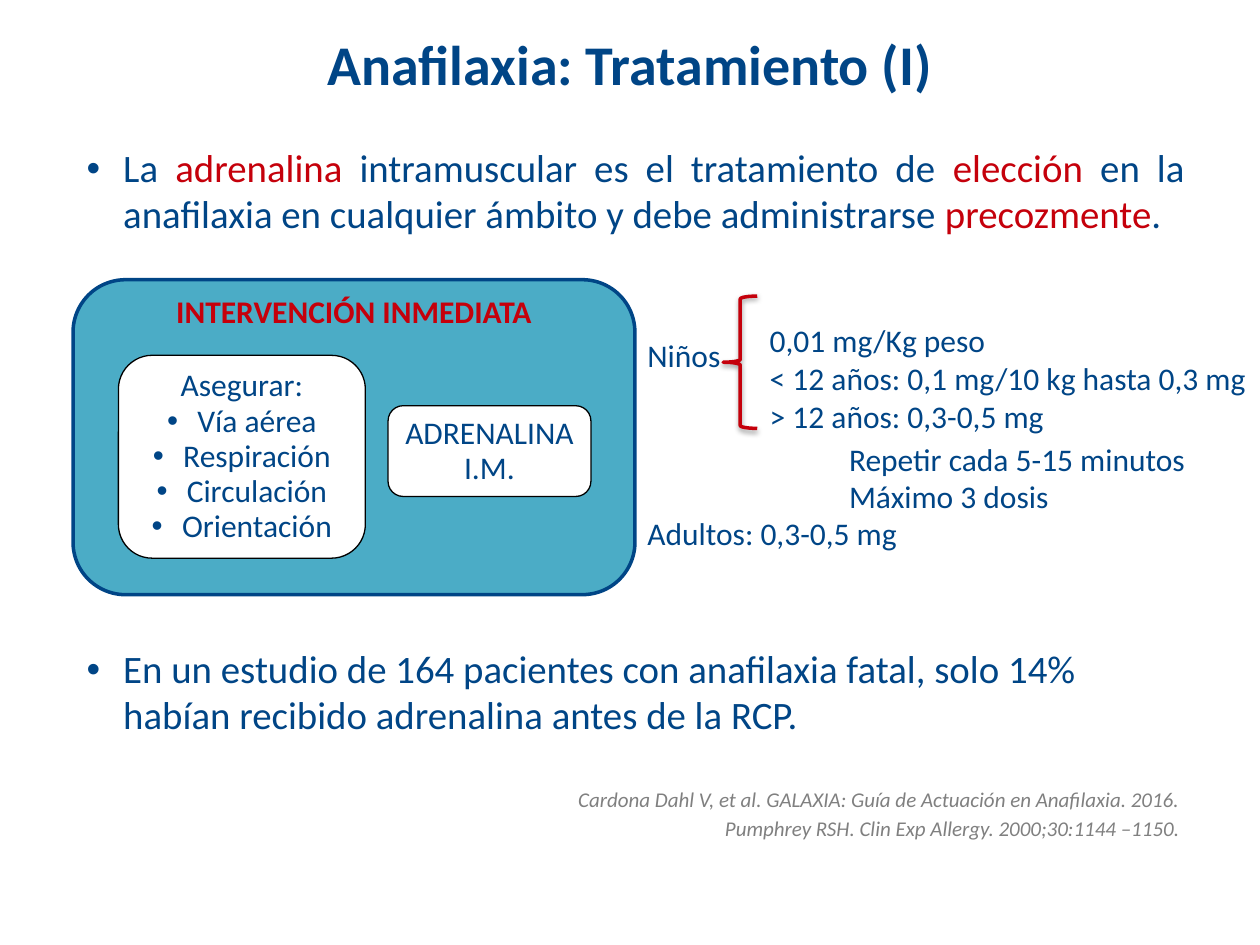
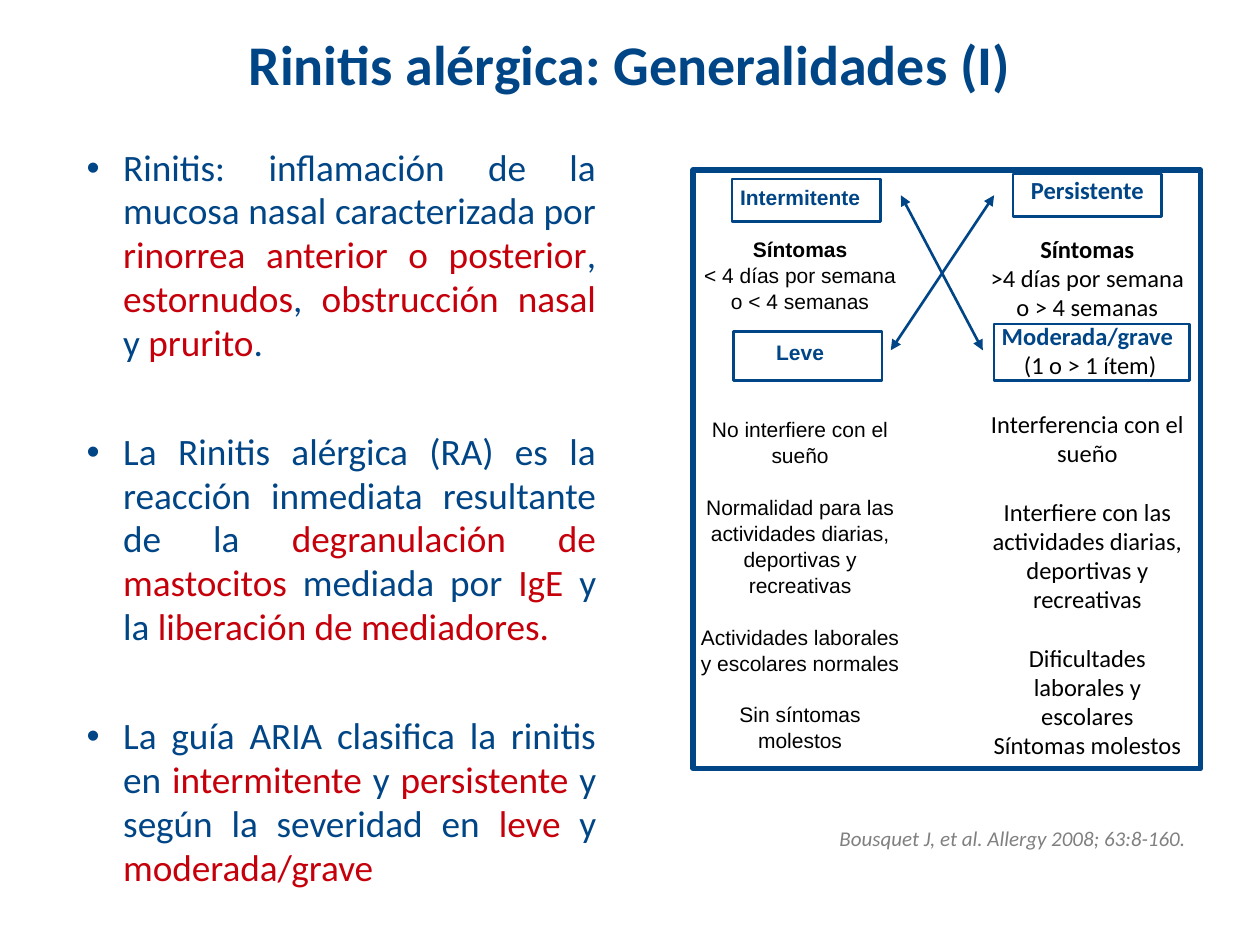
from dataclasses import dataclass
from typing import NamedTuple

from lxml import etree
from pptx import Presentation
from pptx import util as u
from pptx.dml.color import RGBColor
from pptx.enum import shapes, text
from pptx.oxml import ns

COLORS = {"navy": "004586", "red": "C5000B", "teal": "4BACC6",
          "gray": "808080", "black": "000000", "white": "FFFFFF"}
LEFT, CENTER, RIGHT, JUSTIFY = (text.PP_ALIGN.LEFT, text.PP_ALIGN.CENTER,
                                text.PP_ALIGN.RIGHT, text.PP_ALIGN.JUSTIFY)
TOP, MIDDLE = text.MSO_ANCHOR.TOP, text.MSO_ANCHOR.MIDDLE
ROUNDED, PLAIN = shapes.MSO_SHAPE.ROUNDED_RECTANGLE, shapes.MSO_SHAPE.RECTANGLE


class Area(NamedTuple):
    left: float
    top: float
    width: float
    height: float


class Span(NamedTuple):
    words: str
    color: str = "navy"
    bold: bool = False


@dataclass
class Para:
    spans: list[Span]
    before: float = 0
    bullet: bool = False
    align: text.PP_ALIGN | None = None


@dataclass
class Style:
    size: float
    align: text.PP_ALIGN = LEFT
    font: str = "Calibri"
    italic: bool = False
    spacing: float = 1.0
    margin: float = 0.0
    hang: float = 0.29


TITLE = Style(32, CENTER)
REFERENCE = Style(12, RIGHT, italic=True)
DOSE = Style(18)
CARD = Style(18, CENTER, spacing=0.93, margin=0.24, hang=0.24)


# Shared text helpers
def rgb(name: str) -> RGBColor:
    return RGBColor.from_string(COLORS[name])


def accented(marked: str) -> list[Span]:
    """Split at bars: every second piece is red."""
    return [Span(piece, "red" if index % 2 else "navy")
            for index, piece in enumerate(marked.split("|")) if piece]


def plain(*lines: str, color: str = "navy") -> list[Para]:
    return [Para([Span(line, color)]) for line in lines]


def add_element(parent, tag: str, **attributes):
    return etree.SubElement(parent, ns.qn(tag), attributes)


def fill_text(frame, paras: list[Para], style: Style, anchor=TOP, wrap: bool = True) -> None:
    frame.word_wrap = wrap
    frame.vertical_anchor = anchor
    for index, item in enumerate(paras):
        para = frame.paragraphs[0] if index == 0 else frame.add_paragraph()
        if item.bullet:
            properties = para._p.get_or_add_pPr()
            properties.set("marL", str(u.Inches(style.margin)))
            properties.set("indent", str(-u.Inches(style.hang)))
            add_element(properties, "a:buFont", typeface="Arial")
            add_element(properties, "a:buChar", char="•")
        para.alignment = item.align or style.align
        para.line_spacing = style.spacing
        if index:
            para.space_before = u.Pt(item.before)
        for words, color, bold in item.spans:
            span = para.add_run()
            span.text = words
            font = span.font
            font.name, font.size = style.font, u.Pt(style.size)
            font.bold, font.italic = bold, style.italic
            font.color.rgb = rgb(color)


def add_text(page, area: Area, paras: list[Para], style: Style, anchor=TOP, wrap: bool = True) -> None:
    box = page.shapes.add_textbox(*map(u.Inches, area))
    fill_text(box.text_frame, paras, style, anchor, wrap)


# Shared shape helpers
def add_box(page, area: Area, kind, line: str, weight: float, fill: str = ""):
    box = page.shapes.add_shape(kind, *map(u.Inches, area))
    box.shadow.inherit = False
    if fill:
        box.fill.solid()
        box.fill.fore_color.rgb = rgb(fill)
    else:
        box.fill.background()
    box.line.color.rgb = rgb(line)
    box.line.width = u.Pt(weight)
    return box


def add_double_arrow(page, start: tuple[float, float], end: tuple[float, float]) -> None:
    arrow = page.shapes.add_connector(shapes.MSO_CONNECTOR.STRAIGHT, *map(u.Inches, start + end))
    arrow.line.color.rgb = rgb("navy")
    arrow.line.width = u.Pt(1.5)
    line = arrow.line._get_or_add_ln()
    for tag in ("a:headEnd", "a:tailEnd"):
        add_element(line, tag, type="triangle")
    add_element(arrow._element.spPr, "a:effectLst")


def add_page(deck, title: str, references: list[str], reference_area: Area):
    page = deck.slides.add_slide(deck.slide_layouts[6])
    add_text(page, Area(0.5, 0.17, 9, 0.66), [Para([Span(title, bold=True)])], TITLE, MIDDLE)
    paras = plain(*references, color="gray")
    for para in paras:
        para.before = 2.4
    add_text(page, reference_area, paras, REFERENCE)
    return page


# Slide 1: anaphylaxis treatment
def build_anaphylaxis(deck) -> None:
    page = add_page(deck, "Anafilaxia: Tratamiento (I)",
                    ["Cardona Dahl V, et al. GALAXIA: Guía de Actuación en Anafilaxia. 2016. ",
                     "Pumphrey RSH. Clin Exp Allergy. 2000;30:1144 –1150. "],
                    Area(0, 6.19, 9.5, 0.47))
    body = Style(22.2, JUSTIFY, spacing=0.98, margin=0.88)
    add_text(page, Area(0, 1.11, 9.5, 5.02), [
        Para(accented("La |adrenalina| intramuscular es el tratamiento de |elección| en la "
                      "anafilaxia en cualquier ámbito y debe administrarse |precozmente|."),
             bullet=True),
        Para(accented("En un estudio de 164 pacientes con anafilaxia fatal, solo 14% "
                      "habían recibido adrenalina antes de la RCP."),
             before=234, bullet=True, align=LEFT),
    ], body)

    # Immediate intervention panel with its two cards
    panel = add_box(page, Area(0.58, 2.22, 4.46, 2.5), ROUNDED, "navy", 2, "teal")
    panel.text_frame.margin_top = 0
    fill_text(panel.text_frame, [Para([Span("INTERVENCIÓN INMEDIATA", "red", True)])],
              CARD, wrap=False)
    checks = plain("Asegurar:", "Vía aérea", "Respiración", "Circulación", "Orientación")
    for check in checks[1:]:
        check.bullet = True
    cards = [(Area(0.94, 2.82, 1.96, 1.61), checks),
             (Area(3.08, 3.22, 1.61, 0.72), plain("ADRENALINA", "I.M."))]
    for area, paras in cards:
        card = add_box(page, area, ROUNDED, "black", 0.75, "white")
        fill_text(card.text_frame, paras, CARD, MIDDLE, wrap=False)

    # Doses
    doses = [
        (Area(5.04, 2.62, 0.79, 0.4), ["Niños"]),
        (Area(6.01, 2.5, 3.99, 1.01), ["0,01 mg/Kg peso", "< 12 años: 0,1 mg/10 kg hasta 0,3 mg",
                                       "> 12 años: 0,3-0,5 mg"]),
        (Area(5.04, 4.03, 2.21, 0.4), ["Adultos: 0,3-0,5 mg"]),
        (Area(6.64, 3.44, 2.9, 0.71), ["Repetir cada 5-15 minutos", "Máximo 3 dosis"]),
    ]
    for area, lines in doses:
        add_text(page, area, plain(*lines), DOSE, wrap=False)
    brace = add_box(page, Area(5.74, 2.35, 0.27, 1.05), shapes.MSO_SHAPE.LEFT_BRACE, "red", 2)
    effects = brace._element.spPr.find(ns.qn("a:effectLst"))
    shadow = add_element(effects, "a:outerShdw", blurRad=str(u.Pt(3.1)), dist=str(u.Pt(1.6)),
                         dir="5400000", rotWithShape="0")
    shade = add_element(shadow, "a:srgbClr", val=COLORS["black"])
    add_element(shade, "a:alpha", val="38000")


# Slide 2: allergic rhinitis
def build_rhinitis(deck) -> None:
    page = add_page(deck, "Rinitis alérgica: Generalidades (I)",
                    ["Bousquet J, et al. Allergy 2008; 63:8-160."], Area(0.01, 6.5, 9.5, 0.32))
    points = [
        "Rinitis: inflamación de la mucosa nasal caracterizada por |rinorrea anterior o "
        "posterior|, |estornudos|, |obstrucción nasal |y |prurito|.",
        "La Rinitis alérgica (RA) es la reacción inmediata resultante de la |degranulación de "
        "mastocitos| mediada por |IgE |y la |liberación de mediadores.",
        "La guía ARIA clasifica la rinitis en |intermitente| y |persistente| y según la "
        "severidad en |leve| y |moderada/grave",
    ]
    add_text(page, Area(0, 1.11, 4.83, 5.39),
             [Para(accented(point), before=37.3, bullet=True) for point in points],
             Style(21.3, JUSTIFY, spacing=0.98, margin=0.88))

    # Classification columns: (lines skipped before, words, colour, bold)
    mild = [
        (0, "Intermitente", "navy", True),
        (1, "Síntomas", "black", True),
        (0, "< 4 días por semana", "black", False),
        (0, "o < 4 semanas", "black", False),
        (1, "Leve", "navy", True),
        (2, "No interfiere con el sueño", "black", False),
        (1, "Normalidad para las actividades diarias, deportivas y recreativas", "black", False),
        (1, "Actividades laborales y escolares normales", "black", False),
        (1, "Sin síntomas molestos", "black", False),
    ]
    severe = [
        (0, "Persistente", "navy", True),
        (1, "Síntomas", "black", True),
        (0, ">4 días por semana", "black", False),
        (0, "o > 4 semanas", "black", False),
        (0, "Moderada/grave", "navy", True),
        (0, " (1 o > 1 ítem)", "black", False),
        (1, "Interferencia con el sueño", "black", False),
        (1, "Interfiere con las actividades diarias, deportivas y recreativas", "black", False),
        (1, "Dificultades laborales y escolares", "black", False),
        (0, "Síntomas molestos", "black", False),
    ]
    columns = [
        (Area(5.44, 1.41, 1.82, 4.54), mild, Style(12, CENTER, "Arial", spacing=1.04), 14.4),
        (Area(7.72, 1.35, 1.82, 4.81), severe, Style(14, CENTER, spacing=0.99), 16.9),
    ]
    for area, rows, style, pitch in columns:
        add_text(page, area, [Para([Span(words, color, bold)], before=skipped * pitch)
                              for skipped, words, color, bold in rows], style)

    # Outer frame, heading frames and crossing arrows
    add_box(page, Area(5.5, 1.35, 4.03, 4.75), PLAIN, "navy", 3)
    for area in (Area(5.81, 1.42, 1.18, 0.34), Area(8.04, 1.38, 1.18, 0.34),
                 Area(7.89, 2.57, 1.55, 0.45), Area(5.82, 2.63, 1.18, 0.39)):
        add_box(page, area, PLAIN, "navy", 1.5)
    add_double_arrow(page, (7.07, 2.78), (7.89, 1.55))
    add_double_arrow(page, (7.15, 1.55), (7.8, 2.78))


def main() -> None:
    deck = Presentation()
    deck.slide_width, deck.slide_height = u.Inches(10), u.Inches(7.5)
    build_anaphylaxis(deck)
    build_rhinitis(deck)
    deck.save("out.pptx")


if __name__ == "__main__":
    main()
